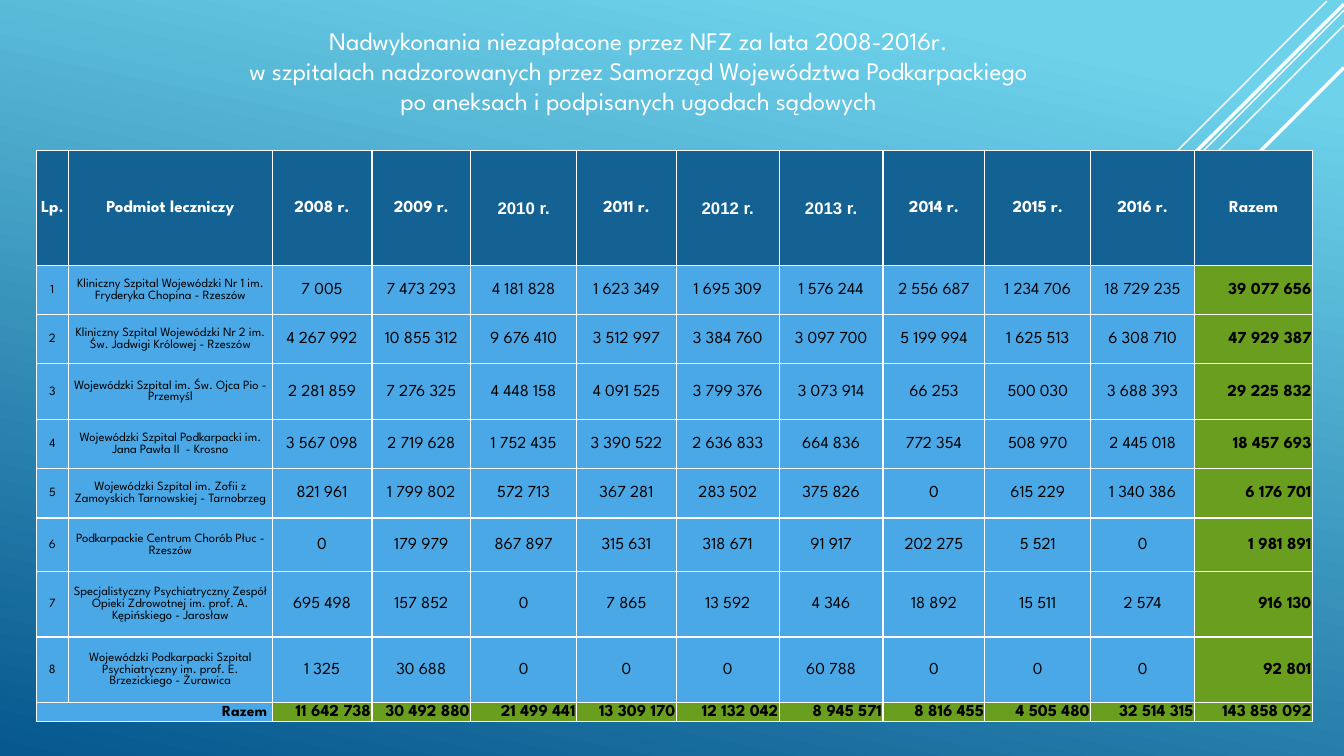
from typing import NamedTuple

from lxml import etree
from pptx import Presentation
from pptx.dml.color import RGBColor
from pptx.enum.shapes import MSO_CONNECTOR
from pptx.enum.text import MSO_ANCHOR, MSO_AUTO_SIZE, PP_ALIGN
from pptx.oxml.ns import qn
from pptx.util import Inches, Pt

STRAIGHT = MSO_CONNECTOR.STRAIGHT
MIDDLE = MSO_ANCHOR.MIDDLE
NO_AUTOFIT = MSO_AUTO_SIZE.NONE
CENTER, RIGHT = PP_ALIGN.CENTER, PP_ALIGN.RIGHT

WHITE = RGBColor(0xFF, 0xFF, 0xFF)
BLACK = RGBColor(0, 0, 0)
SKY = RGBColor(0x6E, 0xD2, 0xEB)
DEEP_BLUE = RGBColor(0x06, 0x58, 0x8E)
HEADER_BLUE = RGBColor(0x14, 0x61, 0x94)
CELL_BLUE = RGBColor(0x4A, 0xA8, 0xE7)
TOTAL_GREEN = RGBColor(0x6A, 0x9E, 0x1F)

MAIN_FONT, OTHER_FONT = "League Spartan", "Arial"


class Ray(NamedTuple):
    x1: float
    y1: float
    x2: float
    y2: float
    weight: float


class Hospital(NamedTuple):
    name: str
    amounts: list[int]
    total: int


class Style(NamedTuple):
    fill: RGBColor
    color: RGBColor = BLACK
    size: float = 12
    bold: bool = False
    align: PP_ALIGN = CENTER
    font: str = MAIN_FONT


HEADER = Style(HEADER_BLUE, WHITE, bold=True)
HEADER_OTHER = HEADER._replace(font=OTHER_FONT)
LABEL = Style(CELL_BLUE, size=9)
AMOUNT = Style(CELL_BLUE)
TOTAL = Style(TOTAL_GREEN, bold=True, align=RIGHT)
TOTAL_LABEL = Style(CELL_BLUE, size=11, bold=True, align=RIGHT)

RAYS = [
    Ray(13.16, 0.01, 9, 4.18, 1),
    Ray(13.33, 0.1, 6.68, 6.75, 1),
    Ray(13.33, 0.25, 7.91, 5.67, 1),
    Ray(13.33, 0.04, 8.02, 5.34, 2.5),
    Ray(13.33, 0.67, 8.58, 5.42, 2.5),
]
TITLE = (
    "Nadwykonania niezapłacone przez NFZ za lata 2008-2016r.\n"
    "w szpitalach nadzorowanych przez Samorząd Województwa Podkarpackiego\n"
    "po aneksach i podpisanych ugodach sądowych"
)
YEARS = range(2008, 2017)
OTHER_FONT_YEARS = {2010, 2012, 2013}
HOSPITALS = [
    Hospital("Kliniczny Szpital Wojewódzki Nr 1 im. Fryderyka Chopina - Rzeszów",
             [7005, 7473293, 4181828, 1623349, 1695309, 1576244, 2556687, 1234706, 18729235],
             39077656),
    Hospital("Kliniczny Szpital Wojewódzki Nr 2 im. Św. Jadwigi Królowej - Rzeszów",
             [4267992, 10855312, 9676410, 3512997, 3384760, 3097700, 5199994, 1625513, 6308710],
             47929387),
    Hospital("Wojewódzki Szpital im. Św. Ojca Pio - Przemyśl",
             [2281859, 7276325, 4448158, 4091525, 3799376, 3073914, 66253, 500030, 3688393],
             29225832),
    Hospital("Wojewódzki Szpital Podkarpacki im. Jana Pawła II  - Krosno",
             [3567098, 2719628, 1752435, 3390522, 2636833, 664836, 772354, 508970, 2445018],
             18457693),
    Hospital("Wojewódzki Szpital im. Zofii z Zamoyskich Tarnowskiej - Tarnobrzeg",
             [821961, 1799802, 572713, 367281, 283502, 375826, 0, 615229, 1340386],
             6176701),
    Hospital("Podkarpackie Centrum Chorób Płuc - Rzeszów",
             [0, 179979, 867897, 315631, 318671, 91917, 202275, 5521, 0],
             1981891),
    Hospital("Specjalistyczny Psychiatryczny Zespół Opieki Zdrowotnej im. prof. A. "
             "Kępińskiego - Jarosław",
             [695498, 157852, 0, 7865, 13592, 4346, 18892, 15511, 2574],
             916130),
    Hospital("Wojewódzki Podkarpacki Szpital Psychiatryczny im. prof. E. "
             "Brzezickiego - Żurawica",
             [1325, 30688, 0, 0, 0, 60788, 0, 0, 0],
             92801),
]
YEAR_TOTALS = [11642738, 30492880, 21499441, 13309170, 12132042, 8945571, 8816455,
               4505480, 32514315, 143858092]
COLUMN_WIDTHS = [0.32, 2.02, 0.99, 0.98, 1.05, 0.99, 1.02, 1.03, 1.01, 1.05, 1.03, 1.17]
ROW_HEIGHTS = [1.14, 0.49, 0.49, 0.55, 0.49, 0.49, 0.53, 0.65, 0.65, 0.19]


def grouped(number: int) -> str:
    """Write a number with spaces between the thousands."""
    return f"{number:,}".replace(",", " ")


def paint_background(page) -> None:
    fill = page.background.fill
    fill.gradient()
    fill.gradient_angle = 258
    for stop, color, position in zip(fill.gradient_stops, (SKY, DEEP_BLUE), (0.1, 1)):
        stop.color.rgb = color
        stop.position = position


def draw_ray(page, ray: Ray) -> None:
    line = page.shapes.add_connector(STRAIGHT, *map(Inches, ray[:4]))
    line.line.color.rgb = WHITE
    line.line.width = Pt(ray.weight)
    etree.SubElement(line._element.spPr, qn("a:effectLst"))


def format_paragraph(para, style: Style) -> None:
    para.alignment = style.align
    for span in para.runs:
        span.font.name = style.font
        span.font.size = Pt(style.size)
        span.font.bold = style.bold
        span.font.color.rgb = style.color


def write_title(page) -> None:
    box = page.shapes.title
    box.left, box.top, box.width, box.height = map(Inches, (0.76, 0.17, 11.15, 1.31))
    frame = box.text_frame
    frame.text = TITLE
    frame.word_wrap = True
    frame.auto_size = NO_AUTOFIT
    frame.vertical_anchor = MIDDLE
    frame.margin_bottom = Inches(0.3)
    for para in frame.paragraphs:
        format_paragraph(para, Style(SKY, WHITE, 18))
        para.line_spacing = Pt(21.6)
        para.space_before = Pt(0)


def add_borders(cell) -> None:
    properties = cell._tc.get_or_add_tcPr()
    for side in ("lnL", "lnR", "lnT", "lnB"):
        border = etree.SubElement(properties, qn(f"a:{side}"), w=str(Pt(1)))
        solid = etree.SubElement(border, qn("a:solidFill"))
        etree.SubElement(solid, qn("a:srgbClr"), val=str(WHITE))


def write_cell(cell, text: str, style: Style) -> None:
    add_borders(cell)
    cell.fill.solid()
    cell.fill.fore_color.rgb = style.fill
    cell.margin_left = cell.margin_top = cell.margin_right = Inches(0.01)
    cell.margin_bottom = 0
    cell.vertical_anchor = MIDDLE
    cell.text_frame.text = text
    format_paragraph(cell.text_frame.paragraphs[0], style)


def table_rows() -> list[list[tuple[str, Style]]]:
    header = [("Lp.", HEADER), ("Podmiot leczniczy", HEADER)]
    header += [(f"{year} r.", HEADER_OTHER if year in OTHER_FONT_YEARS else HEADER)
               for year in YEARS]
    rows = [header + [("Razem", HEADER)]]
    for number, hospital in enumerate(HOSPITALS, start=1):
        amounts = [(grouped(amount), AMOUNT) for amount in hospital.amounts]
        rows.append([(str(number), LABEL), (hospital.name, LABEL), *amounts,
                     (grouped(hospital.total), TOTAL)])
    totals = [(grouped(total), TOTAL) for total in YEAR_TOTALS]
    rows.append([("Razem ", TOTAL_LABEL), ("", TOTAL_LABEL), *totals])
    return rows


def draw_table(page) -> None:
    table = page.shapes.add_table(
        len(ROW_HEIGHTS), len(COLUMN_WIDTHS), Inches(0.36), Inches(1.49),
        Inches(sum(COLUMN_WIDTHS)), Inches(sum(ROW_HEIGHTS))).table
    for column, width in zip(table.columns, COLUMN_WIDTHS):
        column.width = Inches(width)
    for row, height, contents in zip(table.rows, ROW_HEIGHTS, table_rows()):
        row.height = Inches(height)
        for cell, (text, style) in zip(row.cells, contents):
            write_cell(cell, text, style)
    last = len(ROW_HEIGHTS) - 1
    table.cell(last, 0).merge(table.cell(last, 1))


def main() -> None:
    deck = Presentation()
    deck.slide_width, deck.slide_height = Inches(13.33), Inches(7.5)
    page = deck.slides.add_slide(deck.slide_layouts[5])
    paint_background(page)
    for ray in RAYS:
        draw_ray(page, ray)
    draw_table(page)
    write_title(page)
    deck.save("out.pptx")


if __name__ == "__main__":
    main()
